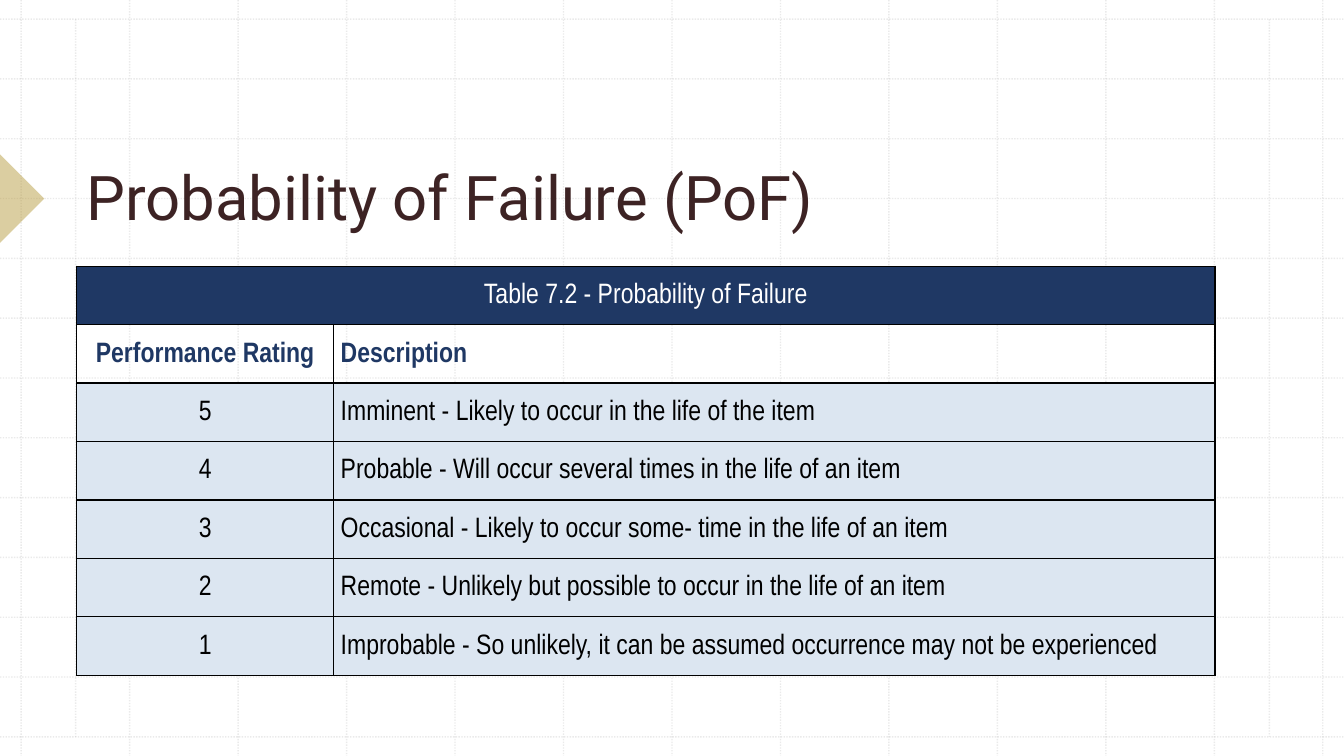
"""Build the Probability of Failure rating slide."""
from dataclasses import dataclass

from lxml import etree
from pptx import Presentation
from pptx import util as u
from pptx.dml.color import RGBColor
from pptx.enum import dml, shapes, text
from pptx.oxml import ns, parse_xml


@dataclass(frozen=True)
class Theme:
    """Colours, fonts and type sizes of the slide."""
    grid: str = "BCBCBC"
    marker: str = "B99E44"
    title: str = "3D2324"
    navy: str = "1F3864"
    band: str = "DCE6F1"
    white: str = "FFFFFF"
    black: str = "000000"
    title_font: str = "Roboto"
    table_font: str = "Arial Narrow"
    title_size: int = 44
    table_size: int = 20


THEME = Theme()
WIDTH, HEIGHT = 13.33, 7.5
GRID_LEFT, GRID_RIGHT, GRID_TOP, GRID_BOTTOM = 0.21, 13.12, 0.19, 7.31
GRID_STEPS = 12
MARGINS = (0.75, 12.59)
CONTENT_LEFT, CONTENT_WIDTH = 0.76, 11.29
COLUMN_WIDTHS = (2.55, 8.74)
ROW_HEIGHT = 0.58
CAPTION = "Table 7.2 - Probability of Failure"
HEADINGS = ("Performance Rating", "Description")
RATINGS = (
    ("5", "Imminent - Likely to occur in the life of the item"),
    ("4", "Probable - Will occur several times in the life of an item"),
    ("3", "Occasional - Likely to occur some- time in the life of an item"),
    ("2", "Remote - Unlikely but possible to occur in the life of an item"),
    ("1", "Improbable - So unlikely, it can be assumed occurrence may not be experienced"),
)


def set_opacity(part, percent):
    """Make the solid colour inside a shape's properties translucent."""
    colour = part._element.spPr.find(".//" + ns.qn("a:srgbClr"))
    etree.SubElement(colour, ns.qn("a:alpha"), val=str(percent * 1000))


def style_runs(paragraph, font, size, colour, bold=False):
    """Format every run of a paragraph."""
    for run in paragraph.runs:
        run.font.name = font
        run.font.size = u.Pt(size)
        run.font.bold = bold
        run.font.color.rgb = RGBColor.from_string(colour)


def add_grid_line(slide, x1, y1, x2, y2):
    """Draw one faint dotted line."""
    grid_line = slide.shapes.add_connector(
        shapes.MSO_CONNECTOR.STRAIGHT, *map(u.Inches, (x1, y1, x2, y2)))
    grid_line.line.color.rgb = RGBColor.from_string(THEME.grid)
    grid_line.line.width = u.Pt(1)
    grid_line.line.dash_style = dml.MSO_LINE.ROUND_DOT
    set_opacity(grid_line, 30)
    etree.SubElement(grid_line._element.spPr, ns.qn("a:effectLst"))


def add_grid(slide):
    """Draw the evenly spaced background grid and its two margin lines."""
    for step in range(GRID_STEPS + 1):
        x = GRID_LEFT + (GRID_RIGHT - GRID_LEFT) * step / GRID_STEPS
        y = GRID_TOP + (GRID_BOTTOM - GRID_TOP) * step / GRID_STEPS
        add_grid_line(slide, x, 0, x, HEIGHT)
        add_grid_line(slide, 0, y, WIDTH, y)
    for x in MARGINS:
        add_grid_line(slide, x, GRID_TOP, x, GRID_BOTTOM)


def add_marker(slide):
    """Place the translucent pointer at the left edge."""
    marker = slide.shapes.add_shape(
        shapes.MSO_SHAPE.RIGHT_TRIANGLE, *map(u.Inches, (-0.31, 1.66, 0.62, 0.62)))
    marker.rotation = 225
    marker.shadow.inherit = False
    marker.fill.solid()
    marker.fill.fore_color.rgb = RGBColor.from_string(THEME.marker)
    set_opacity(marker, 50)
    marker.line.fill.background()


def add_title(slide, wording):
    """Place the slide title above the table."""
    box = slide.shapes.add_textbox(
        *map(u.Inches, (CONTENT_LEFT, 0.79, CONTENT_WIDTH, 1.58)))
    frame = box.text_frame
    frame.word_wrap = True
    frame.vertical_anchor = text.MSO_ANCHOR.BOTTOM
    frame.text = wording
    paragraph = frame.paragraphs[0]
    paragraph.line_spacing = 0.9
    style_runs(paragraph, THEME.title_font, THEME.title_size, THEME.title)


def add_borders(cell):
    """Outline a cell on all four sides."""
    properties = cell._tc.get_or_add_tcPr()
    for side in ("lnL", "lnR", "lnT", "lnB"):
        properties.append(parse_xml(
            f'<a:{side} {ns.nsdecls("a")} w="{u.Pt(1)}"><a:solidFill>'
            f'<a:srgbClr val="{THEME.black}"/></a:solidFill></a:{side}>'))


def fill_cell(cell, wording, colour, fill=None, bold=False, centred=False):
    """Write and format one table cell."""
    add_borders(cell)
    if fill:
        cell.fill.solid()
        cell.fill.fore_color.rgb = RGBColor.from_string(fill)
    else:
        cell.fill.background()
    cell.margin_left = cell.margin_right = u.Inches(0.07)
    cell.margin_top = cell.margin_bottom = 0
    cell.vertical_anchor = text.MSO_ANCHOR.MIDDLE
    cell.text_frame.text = wording
    paragraph = cell.text_frame.paragraphs[0]
    paragraph.alignment = text.PP_ALIGN.CENTER if centred else text.PP_ALIGN.LEFT
    paragraph.line_spacing = 1.07
    paragraph.space_before = paragraph.space_after = u.Pt(4)
    style_runs(paragraph, THEME.table_font, THEME.table_size, colour, bold)


def add_rating_table(slide):
    """Build the table of failure ratings."""
    row_count = len(RATINGS) + 2
    table = slide.shapes.add_table(
        row_count, len(COLUMN_WIDTHS),
        *map(u.Inches, (CONTENT_LEFT, 2.64, CONTENT_WIDTH, ROW_HEIGHT * row_count))).table
    for column, width in zip(table.columns, COLUMN_WIDTHS):
        column.width = u.Inches(width)
    for row in table.rows:
        row.height = u.Inches(ROW_HEIGHT)
    table.cell(0, 0).merge(table.cell(0, 1))
    for column, wording in enumerate((CAPTION, "")):
        fill_cell(table.cell(0, column), wording, THEME.white, THEME.navy, centred=True)
    for column, heading in enumerate(HEADINGS):
        fill_cell(table.cell(1, column), heading, THEME.navy, bold=True, centred=column == 0)
    for row, rating in enumerate(RATINGS, start=2):
        for column, wording in enumerate(rating):
            fill_cell(table.cell(row, column), wording, THEME.black, THEME.band,
                      centred=column == 0)


def main():
    """Assemble and save the slide."""
    deck = Presentation()
    deck.slide_width, deck.slide_height = u.Inches(WIDTH), u.Inches(HEIGHT)
    slide = deck.slides.add_slide(deck.slide_layouts[6])
    add_grid(slide)
    add_marker(slide)
    add_title(slide, "Probability of Failure (PoF)")
    add_rating_table(slide)
    deck.save("out.pptx")


if __name__ == "__main__":
    main()
